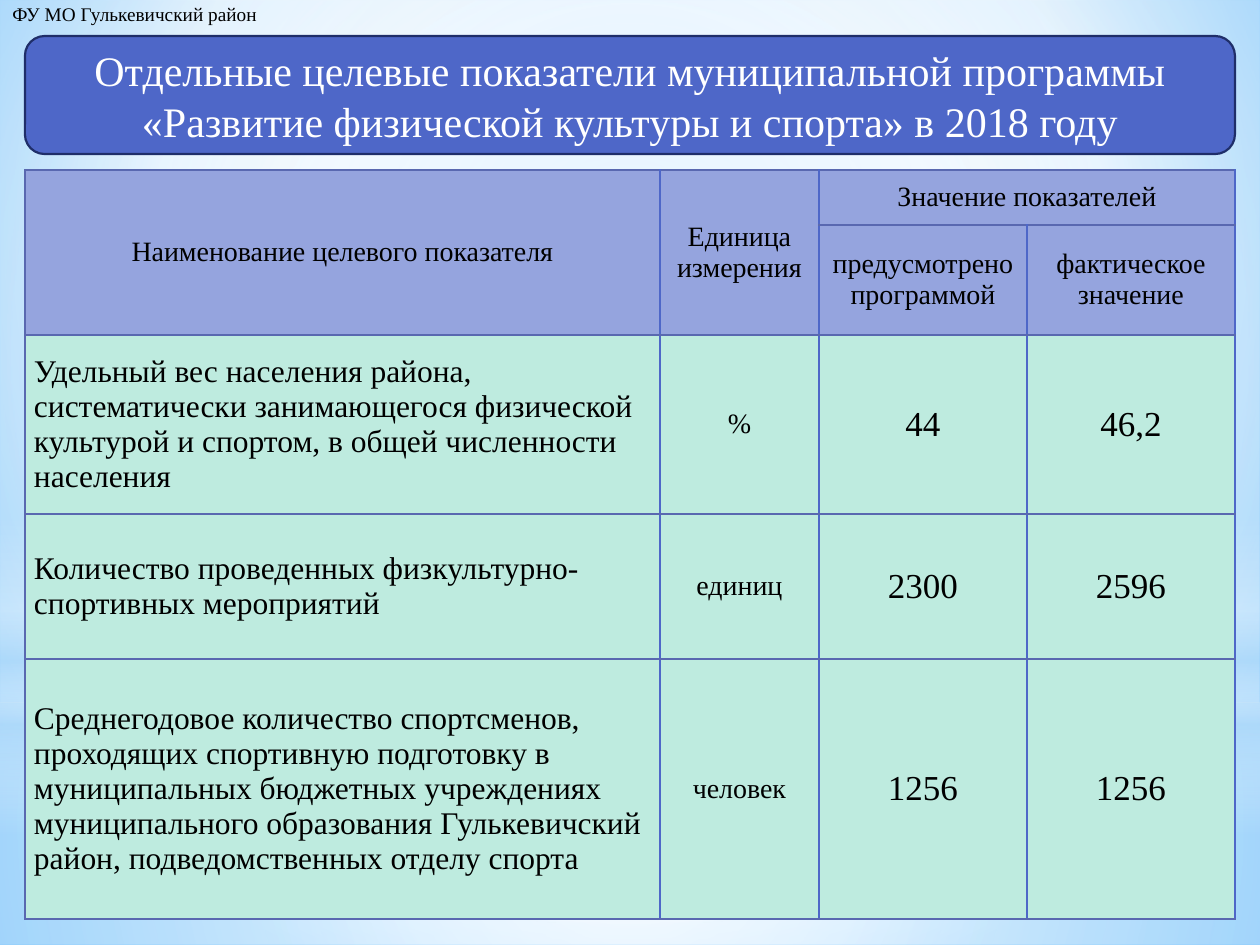
from dataclasses import dataclass

from pptx import Presentation
from pptx.dml.color import RGBColor
from pptx.enum.shapes import MSO_SHAPE
from pptx.enum.text import MSO_ANCHOR, PP_ALIGN
from pptx.oxml import parse_xml
from pptx.oxml.ns import nsdecls, qn
from pptx.util import Pt

RECT, OVAL, ROUNDED = MSO_SHAPE.RECTANGLE, MSO_SHAPE.OVAL, MSO_SHAPE.ROUNDED_RECTANGLE
MIDDLE = MSO_ANCHOR.MIDDLE
LEFT, CENTER = PP_ALIGN.LEFT, PP_ALIGN.CENTER

PX_PER_INCH = 126
FONT = "Times New Roman"
BLACK, WHITE, SKY = "000000", "FFFFFF", "B4DCFA"
BLUE, NAVY, RULE = "4E67C8", "1F2E69", "5968B0"
HEADER_FILL, BODY_FILL = "95A4DE", "BEEBDF"
CENTRED = (50, 50, 50, 50)


@dataclass
class Gradient:
    """Stops are (position %, colour, opacity %); a focus makes it radial."""
    stops: list[tuple[int, str, int]]
    focus: tuple[int, int, int, int] | None = None


@dataclass
class Glow:
    kind: int
    top: int
    height: int
    gradient: Gradient


@dataclass
class Indicator:
    name: str
    unit: str
    planned: str
    actual: str


BACKDROP = Gradient([(0, "9ED5FF", 100), (60, WHITE, 100), (100, "5BB9FF", 100)],
                    (20, 10, 20, 60))
GLOWS = [
    Glow(RECT, 703, 242, Gradient([(0, WHITE, 91), (37, WHITE, 76), (100, SKY, 79)], CENTRED)),
    Glow(RECT, 0, 703, Gradient([(0, WHITE, 89), (48, WHITE, 62), (100, SKY, 79)], CENTRED)),
    Glow(RECT, 519, 315, Gradient([(0, WHITE, 0), (29, WHITE, 30), (45, SKY, 40),
                                   (55, WHITE, 26), (65, SKY, 60), (100, WHITE, 0)])),
    Glow(OVAL, 220, 703, Gradient([(0, WHITE, 100), (56, WHITE, 0)], CENTRED)),
]

# Header cells: (row, column, last row, last column, text)
HEADERS = [
    (0, 0, 1, 0, "Наименование целевого показателя"),
    (0, 1, 1, 1, "Единица\nизмерения"),
    (0, 2, 0, 3, "Значение показателей"),
    (1, 2, 1, 2, "предусмотрено программой"),
    (1, 3, 1, 3, "фактическое значение"),
]
INDICATORS = [
    Indicator("Удельный вес населения района, систематически занимающегося физической "
              "культурой и спортом, в общей численности населения", "%", "44", "46,2"),
    Indicator("Количество проведенных физкультурно-спортивных мероприятий",
              "единиц", "2300", "2596"),
    Indicator("Среднегодовое количество спортсменов, проходящих спортивную подготовку "
              "в муниципальных бюджетных учреждениях муниципального образования "
              "Гулькевичский район, подведомственных отделу спорта",
              "человек", "1256", "1256"),
]
COLUMN_WIDTHS = [635, 159, 208, 208]
ROW_HEIGHTS = [55, 110, 179, 145, 260]


def px(length: int) -> int:
    return round(length * 914400 / PX_PER_INCH)


def box(*lengths: int) -> list[int]:
    return [px(length) for length in lengths]


def rgb(colour: str) -> RGBColor:
    return RGBColor.from_string(colour)


def paint_gradient(fill, owner, gradient: Gradient) -> None:
    """Replace the default gradient of the first filled part in owner."""
    fill.gradient()
    default = next(owner.iter(qn("a:gradFill")))
    stops = "".join(
        f'<a:gs pos="{pos * 1000}"><a:srgbClr val="{colour}">'
        f'<a:alpha val="{opacity * 1000}"/></a:srgbClr></a:gs>'
        for pos, colour, opacity in gradient.stops)
    if gradient.focus:
        edges = " ".join(f'{side}="{value * 1000}"'
                         for side, value in zip("ltrb", gradient.focus))
        direction = f'<a:path path="circle"><a:fillToRect {edges}/></a:path>'
    else:
        direction = '<a:lin ang="5400000" scaled="0"/>'
    default.getparent().replace(default, parse_xml(
        f'<a:gradFill {nsdecls("a")} rotWithShape="1"><a:gsLst>{stops}</a:gsLst>'
        f'{direction}</a:gradFill>'))


def write(frame, text: str, size: int, colour: str = BLACK, align: int = CENTER) -> None:
    frame.text = text
    for paragraph in frame.paragraphs:
        paragraph.alignment = align
        font = paragraph.font
        font.name, font.size, font.color.rgb = FONT, Pt(size), rgb(colour)


def draw_glow(slide, glow: Glow) -> None:
    shape = slide.shapes.add_shape(glow.kind, *box(0, glow.top, 1260, glow.height))
    shape.shadow.inherit = False
    shape.line.fill.background()
    paint_gradient(shape.fill, shape.element, glow.gradient)


def style_cell(cell, fill: str, left_rule: str) -> None:
    cell.vertical_anchor = MIDDLE
    cell.fill.solid()
    cell.fill.fore_color.rgb = rgb(fill)
    properties = cell._tc.get_or_add_tcPr()
    rules = {"lnL": left_rule, "lnR": BLUE, "lnT": RULE, "lnB": RULE}
    for place, (edge, colour) in enumerate(rules.items()):
        properties.insert(place, parse_xml(
            f'<a:{edge} {nsdecls("a")} w="{Pt(1)}"><a:solidFill>'
            f'<a:srgbClr val="{colour}"/></a:solidFill></a:{edge}>'))


def draw_table(slide) -> None:
    frame = slide.shapes.add_table(
        len(ROW_HEIGHTS), len(COLUMN_WIDTHS),
        *box(25, 170, sum(COLUMN_WIDTHS), sum(ROW_HEIGHTS)))
    table = frame.table
    for column, width in zip(table.columns, COLUMN_WIDTHS):
        column.width = px(width)
    for row, height in zip(table.rows, ROW_HEIGHTS):
        row.height = px(height)
    for r in range(len(ROW_HEIGHTS)):
        for c in range(len(COLUMN_WIDTHS)):
            style_cell(table.cell(r, c), HEADER_FILL if r < 2 else BODY_FILL,
                       RULE if c == 0 else BLUE)

    # Header
    for row, column, last_row, last_column, text in HEADERS:
        cell = table.cell(row, column)
        if (row, column) != (last_row, last_column):
            cell.merge(table.cell(last_row, last_column))
        write(cell.text_frame, text, 16)

    # Indicators
    for row, item in enumerate(INDICATORS, start=2):
        contents = [(item.name, 18, LEFT), (item.unit, 16, CENTER),
                    (item.planned, 20, CENTER), (item.actual, 20, CENTER)]
        for column, (text, size, align) in enumerate(contents):
            cell = table.cell(row, column)
            cell.margin_left = cell.margin_right = px(9)
            cell.margin_top = cell.margin_bottom = 0
            write(cell.text_frame, text, size, align=align)


def draw_title(slide) -> None:
    banner = slide.shapes.add_shape(ROUNDED, *box(25, 36, 1210, 118))
    banner.shadow.inherit = False
    banner.fill.solid()
    banner.fill.fore_color.rgb = rgb(BLUE)
    banner.line.color.rgb = rgb(NAVY)
    banner.line.width = Pt(1.25)
    banner.text_frame.word_wrap = True
    banner.text_frame.vertical_anchor = MIDDLE
    write(banner.text_frame, "Отдельные целевые показатели муниципальной программы "
          "«Развитие физической культуры и спорта» в 2018 году", 24, WHITE)


def main() -> None:
    deck = Presentation()
    deck.slide_width, deck.slide_height = box(1260, 945)
    slide = deck.slides.add_slide(deck.slide_layouts[6])

    # Sky backdrop
    paint_gradient(slide.background.fill, slide.element, BACKDROP)
    for glow in GLOWS:
        draw_glow(slide, glow)

    # Department label
    label = slide.shapes.add_textbox(*box(0, -4, 275, 36))
    label.text_frame.word_wrap = False
    write(label.text_frame, "ФУ МО Гулькевичский район", 11, align=LEFT)

    draw_table(slide)
    draw_title(slide)
    deck.save("out.pptx")


if __name__ == "__main__":
    main()
